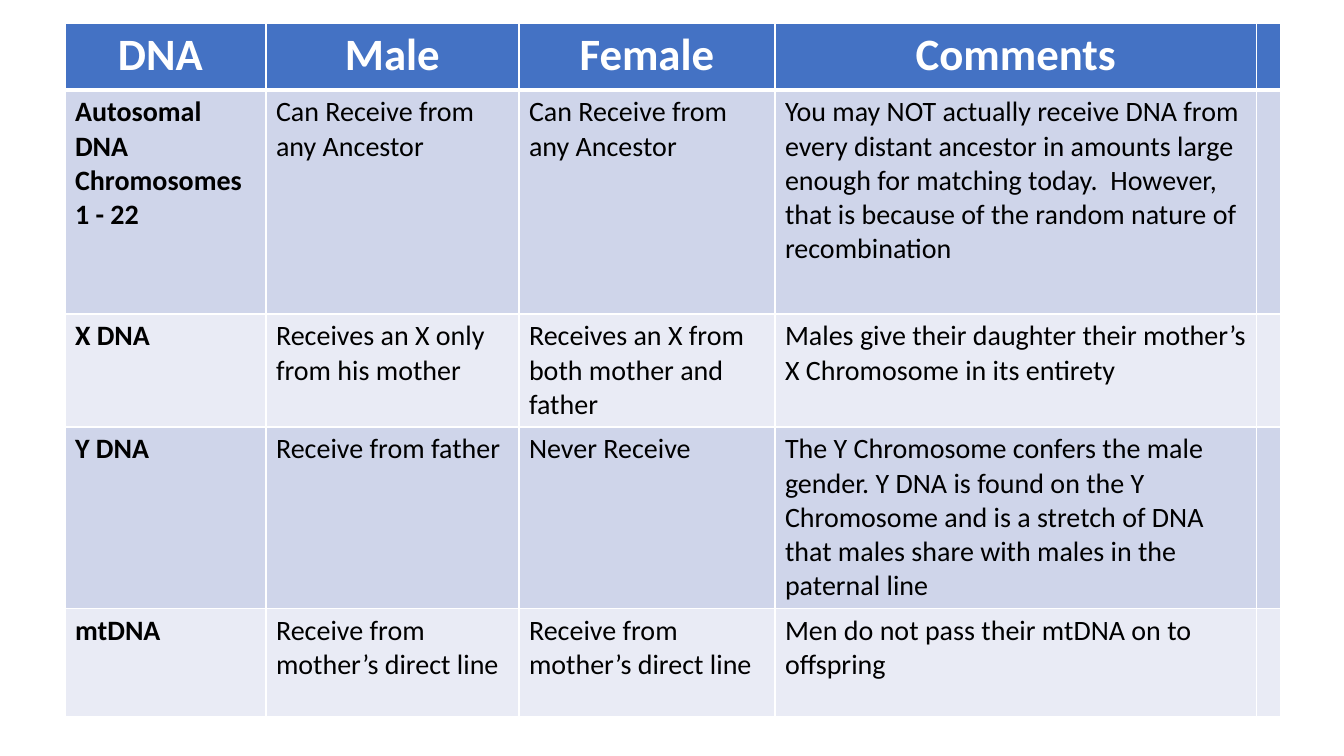
from lxml import etree
from pptx import Presentation
from pptx import util as u
from pptx.dml.color import RGBColor
from pptx.enum import text
from pptx.oxml.ns import qn

PX_PER_INCH = 100.8
COLORS = {"header": "4472C4", "odd": "CFD5EA", "even": "E9EBF5",
          "white": "FFFFFF", "black": "000000"}
COLS = [201, 253, 256, 482, 23]
ROWS = [67, 224, 108, 162, 108]
DNA_TABLE = [
    ["DNA ", "Male", "Female", "Comments", ""],
    ["Autosomal DNA\nChromosomes\n1 - 22",
     "Can Receive from any Ancestor",
     "Can Receive from any Ancestor",
     "You may NOT actually receive DNA from every distant ancestor in amounts "
     "large enough for matching today.  However, that is because of the random "
     "nature of recombination", ""],
    ["X DNA",
     "Receives an X only from his mother",
     "Receives an X from both mother and father",
     "Males give their daughter their mother’s X Chromosome in its entirety", ""],
    ["Y DNA",
     "Receive from father",
     "Never Receive",
     "The Y Chromosome confers the male gender. Y DNA is found on the Y "
     "Chromosome and is a stretch of DNA that males share with males in the "
     "paternal line", ""],
    ["mtDNA",
     "Receive from mother’s direct line",
     "Receive from mother’s direct line",
     "Men do not pass their mtDNA on to offspring", ""],
]


def px(n):
    """Turn pixels into EMU."""
    return u.Inches(n / PX_PER_INCH)


def rgb(name):
    """Look up a named colour."""
    return RGBColor.from_string(COLORS[name])


def set_borders(cell, widths):
    """Draw white cell borders with the given widths in points by side."""
    tc_pr = cell._tc.get_or_add_tcPr()
    for side, width in widths.items():
        ln = etree.SubElement(tc_pr, qn(f"a:ln{side}"), w=str(u.Pt(width)))
        fill = etree.SubElement(ln, qn("a:solidFill"))
        etree.SubElement(fill, qn("a:srgbClr"), val=COLORS["white"])


def fill_cell(cell, content, row, col):
    """Write and format one cell according to its row and column."""
    header = row == 0
    set_borders(cell, {"L": 1, "R": 1, "T": 3 if row == 1 else 1,
                       "B": 3 if header else 1})
    cell.fill.solid()
    cell.fill.fore_color.rgb = rgb("header" if header else
                                   "odd" if row % 2 else "even")
    cell.text_frame.text = content
    for p in cell.text_frame.paragraphs:
        p.alignment = text.PP_ALIGN.CENTER if header else text.PP_ALIGN.LEFT
        for r in p.runs:
            r.font.name = "Calibri"
            r.font.size = u.Pt(32 if header else 20)
            r.font.bold = header or col == 0
            r.font.color.rgb = rgb("white" if header else "black")


def add_dna_table(s, left, top):
    """Add the table of DNA inheritance by gender."""
    frame = s.shapes.add_table(len(ROWS), len(COLS), px(left), px(top),
                               px(sum(COLS)), px(sum(ROWS)))
    table = frame.table
    for column, width in zip(table.columns, COLS):
        column.width = px(width)
    for row, height in zip(table.rows, ROWS):
        row.height = px(height)
    for i, contents in enumerate(DNA_TABLE):
        for j, content in enumerate(contents):
            fill_cell(table.cell(i, j), content, i, j)


def main():
    """Build the slide and save it."""
    prs = Presentation()
    prs.slide_width, prs.slide_height = px(1344), px(756)
    s = prs.slides.add_slide(prs.slide_layouts[6])
    add_dna_table(s, 65, 23)
    prs.save("out.pptx")


if __name__ == "__main__":
    main()
